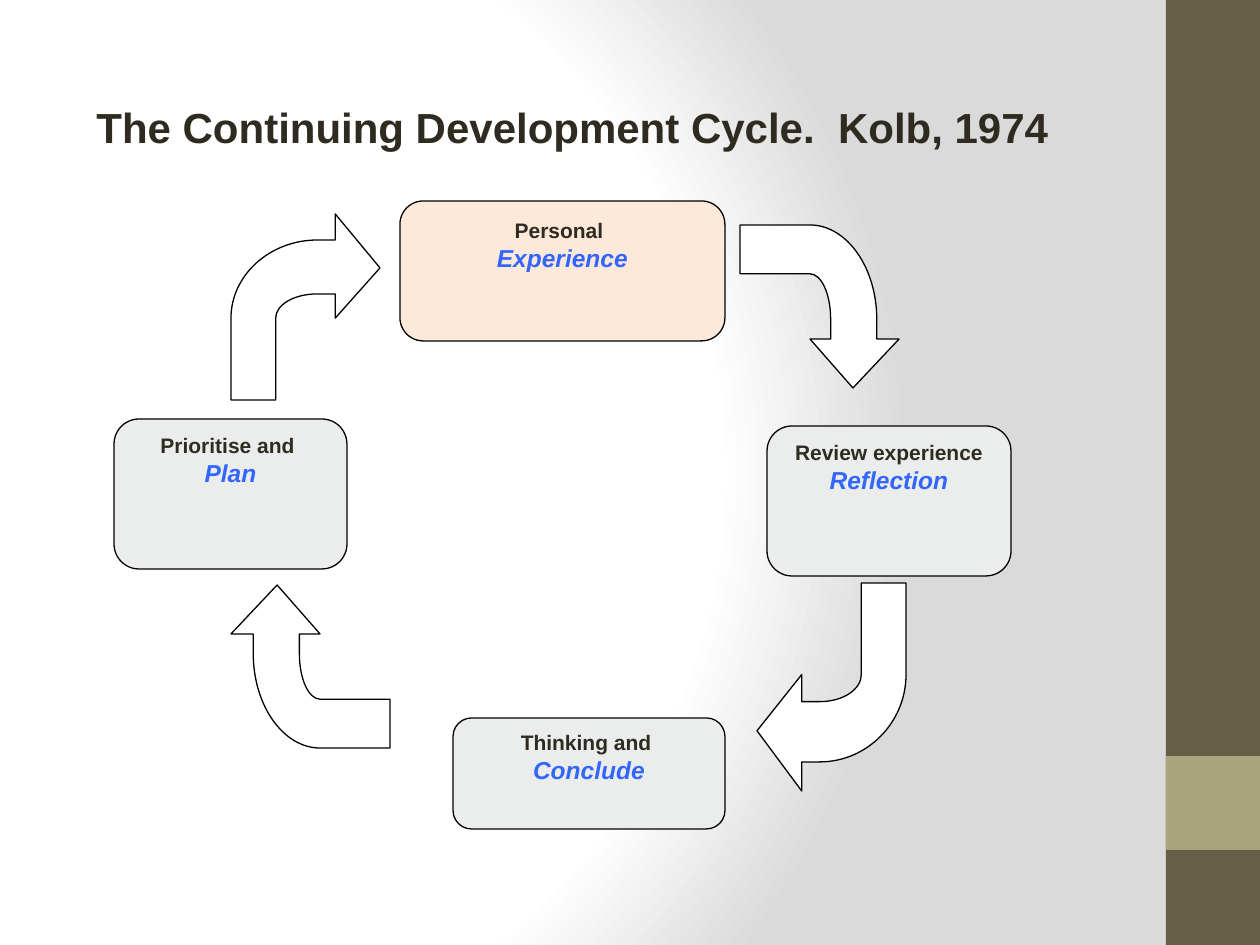
from dataclasses import dataclass

from lxml import etree
from pptx import Presentation, util as u
from pptx.dml.color import RGBColor
from pptx.enum import shapes, text
from pptx.oxml import parse_xml
from pptx.oxml.ns import nsdecls, qn

SCALE = u.Inches(1) / 126  # EMU in one px


@dataclass(frozen=True)
class Theme:
    font: str = "Arial"
    title_pt: int = 24
    step_pt: int = 12
    stage_pt: int = 14
    line_pt: float = 0.75
    ink: str = "2F2B20"
    accent: str = "3366FF"
    line: str = "000000"
    white: str = "FFFFFF"
    grey: str = "DADADA"
    peach: str = "FDE9D9"
    pale: str = "EAEDEB"
    band: str = "675E47"
    tab: str = "A9A57C"


T = Theme()

# Bent arrow in a unit box, clockwise to the left from its tip;
# each curve takes three points in a row, from the index in CURVES
OUTLINE = [
    (1, 0.29), (0.7, 0), (0.7, 0.14), (0.58, 0.14),
    (0.26, 0.14), (0, 0.33), (0, 0.56),
    (0, 1), (0.3, 1), (0.3, 0.56),
    (0.3, 0.49), (0.42, 0.43), (0.58, 0.43),
    (0.7, 0.43), (0.7, 0.56),
]
CURVES = (4, 10)


def px(n):
    return u.Emu(round(n * SCALE))


def set_background(s):
    s.background.fill.solid()
    bg = s._element.xpath(".//p:bgPr")[0]
    stops = "".join(
        f'<a:gs pos="{pos}000"><a:srgbClr val="{color}"/></a:gs>'
        for pos, color in ((0, T.white), (75, T.white), (100, T.grey)))
    bg.replace(bg[0], parse_xml(
        f'<a:gradFill {nsdecls("a")} rotWithShape="1"><a:gsLst>{stops}</a:gsLst>'
        '<a:path path="circle"><a:fillToRect l="20000" t="50000" r="100000" b="50000"/>'
        '</a:path></a:gradFill>'))


def paint(sp, fill, line=None):
    sp.shadow.inherit = False
    sp.fill.solid()
    sp.fill.fore_color.rgb = RGBColor.from_string(fill)
    if line:
        sp.line.color.rgb = RGBColor.from_string(line)
        sp.line.width = u.Pt(T.line_pt)
    else:
        sp.line.fill.background()


def add_shape(s, kind, box, fill, line=None):
    sp = s.shapes.add_shape(kind, *map(px, box))
    paint(sp, fill, line)
    return sp


def add_text(p, words, size=T.step_pt, color=T.ink, italic=None, align=None):
    p.alignment = align
    r = p.add_run()
    r.text = words
    r.font.name, r.font.size = T.font, u.Pt(size)
    r.font.bold, r.font.italic = True, italic
    r.font.color.rgb = RGBColor.from_string(color)


def add_stage(s, box, step, stage, fill=T.pale):
    sp = add_shape(s, shapes.MSO_SHAPE.ROUNDED_RECTANGLE, box, fill, T.line)
    tf = sp.text_frame
    tf.word_wrap = True
    tf.vertical_anchor = text.MSO_ANCHOR.TOP
    center = text.PP_ALIGN.CENTER
    add_text(tf.paragraphs[0], step, align=center)
    add_text(tf.add_paragraph(), stage, size=T.stage_pt, color=T.accent,
             italic=True, align=center)
    return tf


def bend(sp):
    """Turn the runs of three lines named in CURVES into Bezier curves."""
    lines = sp._element.xpath(".//a:lnTo")
    for i in CURVES:
        trio = lines[i - 1:i + 2]
        curve = etree.Element(qn("a:cubicBezTo"))
        trio[0].addprevious(curve)
        for line in trio:
            curve.append(line[0])
            line.getparent().remove(line)


def add_arrow(s, box, rotation):
    x, y, w, h = box
    pts = [(px(x + a * w), px(y + b * h)) for a, b in OUTLINE]
    fb = s.shapes.build_freeform(*pts[0], scale=1.0)
    fb.add_line_segments(pts[1:], close=True)
    sp = fb.convert_to_shape()
    bend(sp)
    sp.rotation = rotation
    paint(sp, T.white, T.line)


def add_title(s, box, words):
    tf = s.shapes.add_textbox(*map(px, box)).text_frame
    tf.word_wrap = False
    tf.vertical_anchor = text.MSO_ANCHOR.TOP
    tf.margin_top = px(8)
    add_text(tf.paragraphs[0], words, size=T.title_pt)


def main():
    prs = Presentation()
    prs.slide_width, prs.slide_height = px(1260), px(945)
    s = prs.slides.add_slide(prs.slide_layouts[6])
    set_background(s)

    # Side band
    rect = shapes.MSO_SHAPE.RECTANGLE
    add_shape(s, rect, (1166, 0, 94, 945), T.band)
    add_shape(s, rect, (1166, 756, 94, 94), T.tab)

    # Stages of the cycle and the arrows between them
    tf = add_stage(s, (400, 201, 325, 140), "Personal", "Experience", T.peach)
    add_text(tf.paragraphs[0], " ", size=T.stage_pt, color=T.accent,
             italic=True, align=text.PP_ALIGN.CENTER)
    add_arrow(s, (738, 227, 163, 159), 90)
    add_stage(s, (114, 419, 233, 150), "Prioritise and ", "Plan")
    add_arrow(s, (231, 214, 149, 186), 0)
    add_stage(s, (767, 426, 244, 150), "Review experience", "Reflection")
    add_arrow(s, (757, 583, 149, 208), 180)
    add_stage(s, (453, 718, 272, 111), "Thinking and ", "Conclude")
    add_arrow(s, (229, 587, 163, 159), 270)

    add_title(s, (84, 94, 987, 102), "The Continuing Development Cycle.  Kolb, 1974")
    prs.save("out.pptx")


if __name__ == "__main__":
    main()
